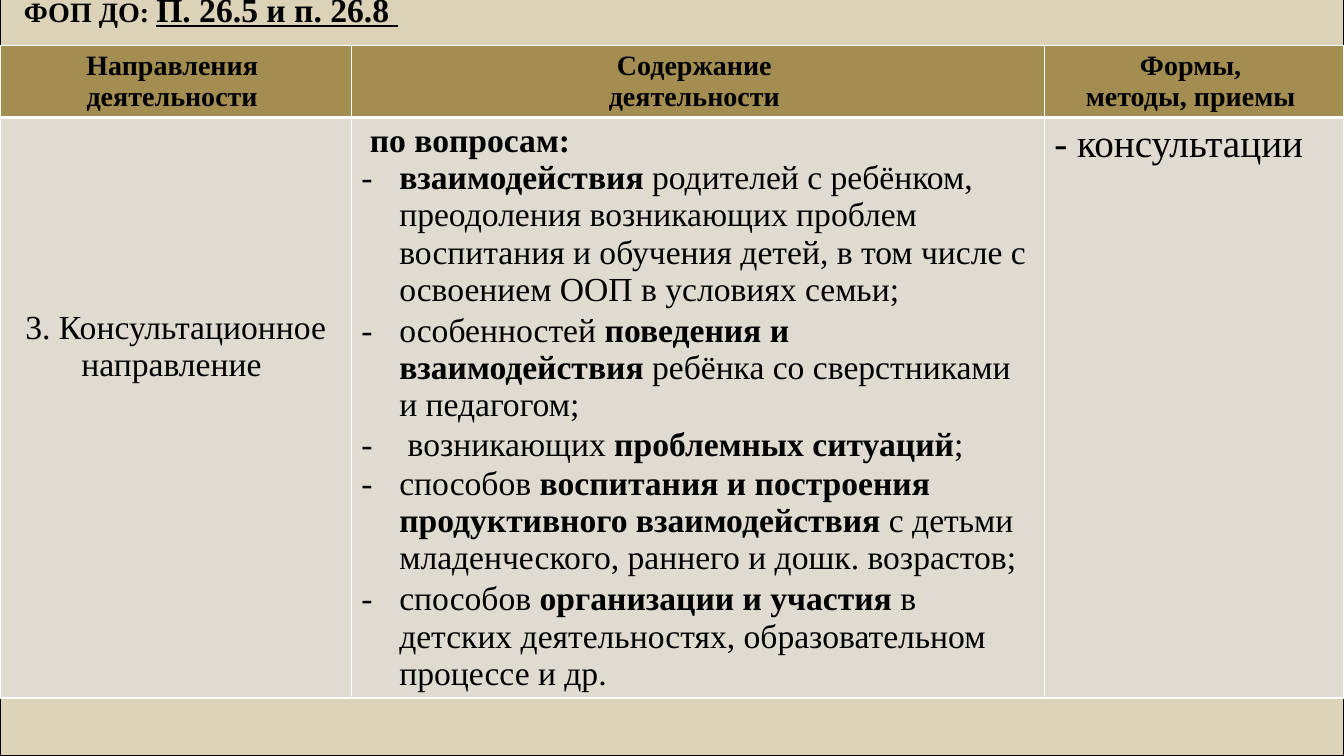
from lxml.etree import SubElement
from pptx import Presentation
from pptx.dml.color import RGBColor
from pptx.enum.text import PP_ALIGN
from pptx.oxml.ns import qn
from pptx.util import Pt

FONT = "Times New Roman"
BLACK = RGBColor(0x00, 0x00, 0x00)
WHITE = RGBColor(0xFF, 0xFF, 0xFF)
GOLD = RGBColor(0xA3, 0x8D, 0x51)
SAND = RGBColor(0xDC, 0xD2, 0xB8)
STONE = RGBColor(0xE0, 0xDB, 0xD0)

HEADERS = [
    ("Направления ", "деятельности "),
    ("Содержание ", "деятельности "),
    ("Формы, ", "методы, приемы "),
]
TOPICS = [
    (0, [("взаимодействия", True),
         (" родителей с ребёнком, преодоления возникающих проблем воспитания и обучения детей, "
          "в том числе с освоением ООП в условиях семьи;", False)]),
    (3, [("особенностей ", False), ("поведения и взаимодействия ", True),
         ("ребёнка со сверстниками и педагогом;", False)]),
    (2, [(" возникающих ", False), ("проблемных ситуаций", True), (";", False)]),
    (1, [("способов ", False), ("воспитания и построения продуктивного взаимодействия ", True),
         ("с детьми младенческого, раннего и дошк. возрастов;", False)]),
    (3, [("способов ", False), ("организации и участия ", True),
         ("в детских деятельностях, образовательном процессе и др.", False)]),
]


def add_span(para, text, size, bold=False, underline=False):
    """Add one formatted run to a paragraph."""
    span = para.add_run()
    span.text = text
    font = span.font
    font.name, font.size, font.bold, font.underline = FONT, Pt(size), bold, underline
    font.color.rgb = BLACK


def add_hyphen(para, indent):
    """Give a paragraph a hanging hyphen bullet."""
    properties = para._p.get_or_add_pPr()
    properties.set("marL", str(Pt(indent)))
    properties.set("indent", str(-Pt(indent)))
    SubElement(properties, qn("a:buFont"), typeface=FONT)
    SubElement(properties, qn("a:buChar"), char="-")


def style_cell(cell, fill, border, bottom=1):
    """Set the borders and then the fill of a cell."""
    properties = cell._tc.get_or_add_tcPr()
    for side, width in (("lnL", 1), ("lnR", 1), ("lnT", 1), ("lnB", bottom)):
        line = SubElement(properties, qn(f"a:{side}"), w=str(Pt(width)))
        paint = SubElement(line, qn("a:solidFill"))
        SubElement(paint, qn("a:srgbClr"), val=str(border))
    cell.fill.solid()
    cell.fill.fore_color.rgb = fill


def add_grid(page, left, top, widths, heights):
    """Add an unbanded table with the given column widths and row heights."""
    frame = page.shapes.add_table(len(heights), len(widths), Pt(left), Pt(top),
                                  Pt(sum(widths)), Pt(sum(heights)))
    table = frame.table
    table.first_row = table.horz_banding = False
    for column, width in zip(table.columns, widths):
        column.width = Pt(width)
    for row, height in zip(table.rows, heights):
        row.height = Pt(height)
    return table


def add_backdrop(page, left, top, width, height):
    """Add the one-cell table that carries the heading."""
    cell = add_grid(page, left, top, [width], [height]).cell(0, 0)
    style_cell(cell, SAND, BLACK)
    cell.margin_left = Pt(17)
    para = cell.text_frame.paragraphs[0]
    add_span(para, "ФОП ДО: ", 20, bold=True)
    add_span(para, "П. 26.5 и п. 26.8 ", 24, bold=True, underline=True)


def fill_header(cell, lines):
    """Write the centred lines of a column header."""
    style_cell(cell, GOLD, WHITE, bottom=3)
    box = cell.text_frame
    for index, line in enumerate(lines):
        para = box.add_paragraph() if index else box.paragraphs[0]
        para.alignment = PP_ALIGN.CENTER
        add_span(para, line, 20, bold=True)


def fill_topics(cell):
    """Write the lead-in and the bulleted topics."""
    box = cell.text_frame
    add_span(box.paragraphs[0], " по вопросам:", 24, bold=True)
    for gap, spans in TOPICS:
        para = box.add_paragraph()
        para.space_before = Pt(gap)
        add_hyphen(para, 27)
        for text, bold in spans:
            add_span(para, text, 24, bold)


def add_directions(page, left, top, widths, heights):
    """Add the table of directions, contents and forms."""
    table = add_grid(page, left, top, widths, heights)
    for column, lines in enumerate(HEADERS):
        fill_header(table.cell(0, column), lines)
    direction, content, forms = (table.cell(1, column) for column in range(3))
    for cell in (direction, content, forms):
        style_cell(cell, STONE, WHITE)
    direction.margin_top = Pt(137)
    para = direction.text_frame.paragraphs[0]
    para.alignment = PP_ALIGN.CENTER
    add_span(para, "3. Консультационное направление ", 24)
    fill_topics(content)
    add_span(forms.text_frame.paragraphs[0], "- консультации", 28)


def main():
    """Build and save the deck."""
    deck = Presentation()
    deck.slide_width, deck.slide_height = Pt(960), Pt(540)
    page = deck.slides.add_slide(deck.slide_layouts[6])
    page.background.fill.solid()
    page.background.fill.fore_color.rgb = GOLD
    add_backdrop(page, 0, -9, 960, 549)
    add_directions(page, 0, 32.4, [251, 495, 214], [51.6, 414.6])
    deck.save("out.pptx")


if __name__ == "__main__":
    main()
